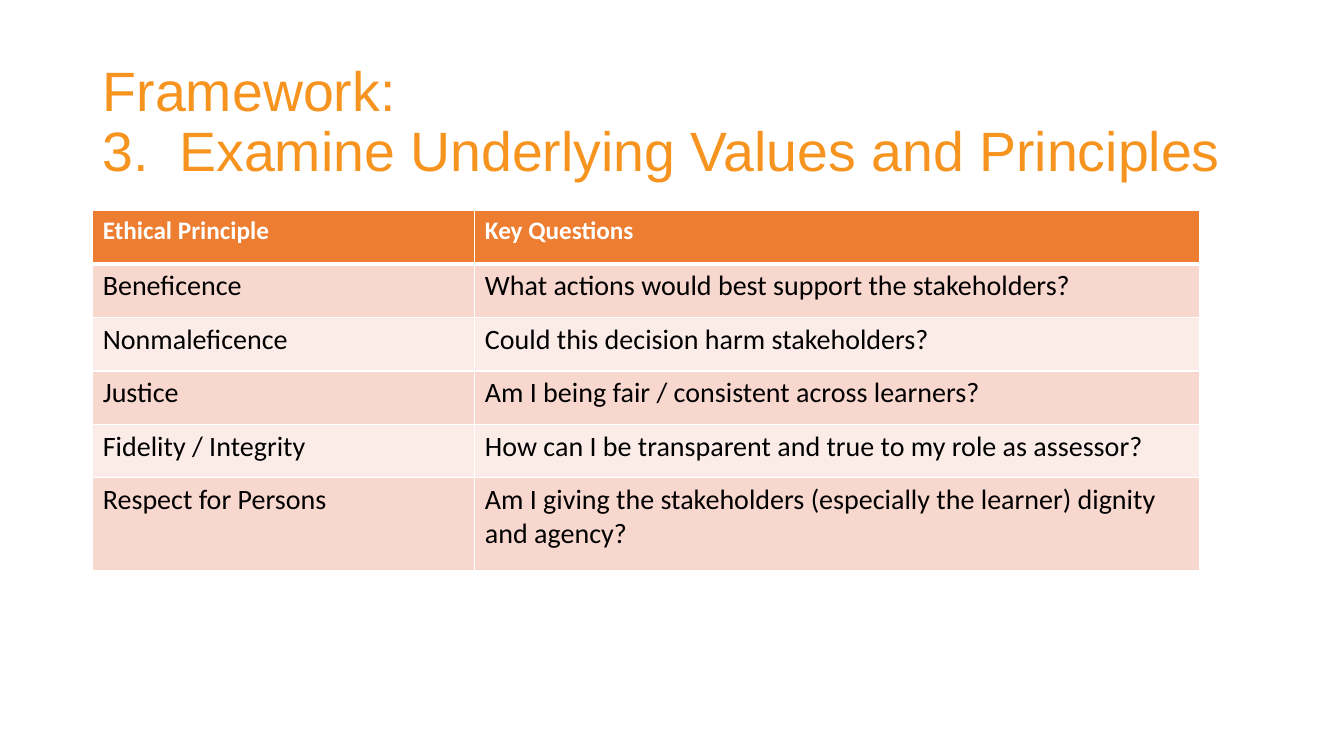
from lxml.etree import SubElement
from pptx import Presentation
from pptx.dml.color import RGBColor
from pptx.enum.text import MSO_ANCHOR, MSO_AUTO_SIZE, PP_ALIGN
from pptx.oxml.ns import qn
from pptx.util import Inches, Pt

ORANGE = "F6941F"
HEADER_FILL = "ED7D31"
BAND_FILLS = ("F8D7CE", "FCECE8")
WHITE = "FFFFFF"
BLACK = "000000"

PRINCIPLES = [
    ("Ethical Principle", "Key Questions"),
    ("Beneficence", "What actions would best support the stakeholders?"),
    ("Nonmaleficence", "Could this decision harm stakeholders?"),
    ("Justice", "Am I being fair / consistent across learners?"),
    ("Fidelity / Integrity", "How can I be transparent and true to my role as assessor?"),
    ("Respect for Persons",
     "Am I giving the stakeholders (especially the learner) dignity and agency?"),
]


def color(value):
    return RGBColor.from_string(value)


class SlideBuilder:
    """Holds the style and the current slide, and adds its elements."""

    def __init__(self, presentation):
        self.title_font = "Arial"
        self.body_font = "Calibri"
        self.slide = presentation.slides.add_slide(presentation.slide_layouts[5])

    def add_run(self, paragraph, text, font_name, size, text_color, bold=False):
        run = paragraph.add_run()
        run.text = text
        run.font.name = font_name
        run.font.size = Pt(size)
        run.font.bold = bold
        run.font.color.rgb = color(text_color)

    def add_title(self, heading, number, topic):
        title = self.slide.shapes.title
        title.left, title.top = Inches(0.92), Inches(0.5)
        title.width, title.height = Inches(11.5), Inches(1.45)
        frame = title.text_frame
        frame.word_wrap = True
        frame.auto_size = MSO_AUTO_SIZE.NONE
        frame.vertical_anchor = MSO_ANCHOR.MIDDLE
        paragraph = frame.paragraphs[0]
        paragraph.alignment = PP_ALIGN.LEFT
        paragraph.line_spacing = 0.9
        tabs = SubElement(paragraph._p.get_or_add_pPr(), qn("a:tabLst"))
        SubElement(tabs, qn("a:tab"), pos=str(Inches(0.76)), algn="l")
        self.add_run(paragraph, heading, self.title_font, 39.6, ORANGE)
        paragraph.add_line_break()
        self.add_run(paragraph, f"{number}\t{topic}", self.title_font, 39.6, ORANGE)

    def set_borders(self, cell, top, bottom):
        properties = cell._tc.get_or_add_tcPr()
        for side, width in (("L", 1), ("R", 1), ("T", top), ("B", bottom)):
            line = SubElement(properties, qn(f"a:ln{side}"), w=str(Pt(width)))
            fill = SubElement(line, qn("a:solidFill"))
            SubElement(fill, qn("a:srgbClr"), val=WHITE)

    def add_table(self, rows, column_widths, row_heights):
        frame = self.slide.shapes.add_table(
            len(rows), len(column_widths), Inches(0.92), Inches(2.09),
            Inches(sum(column_widths)), Inches(sum(row_heights)))
        table = frame.table
        for column, width in zip(table.columns, column_widths):
            column.width = Inches(width)
        for index, (texts, height) in enumerate(zip(rows, row_heights)):
            table.rows[index].height = Inches(height)
            header = index == 0
            for cell, text in zip(table.rows[index].cells, texts):
                self.set_borders(cell, 3 if index == 1 else 1, 3 if header else 1)
                cell.fill.solid()
                cell.fill.fore_color.rgb = color(
                    HEADER_FILL if header else BAND_FILLS[(index - 1) % 2])
                self.add_run(cell.text_frame.paragraphs[0], text, self.body_font,
                             18 if header else 20, WHITE if header else BLACK, header)


def main():
    presentation = Presentation()
    presentation.slide_width, presentation.slide_height = Inches(13.33), Inches(7.5)
    builder = SlideBuilder(presentation)
    builder.add_title("Framework:", "3.", "Examine Underlying Values and Principles")
    builder.add_table(PRINCIPLES, (3.79, 7.19), [0.53] * 5 + [0.92])
    presentation.save("out.pptx")


if __name__ == "__main__":
    main()
